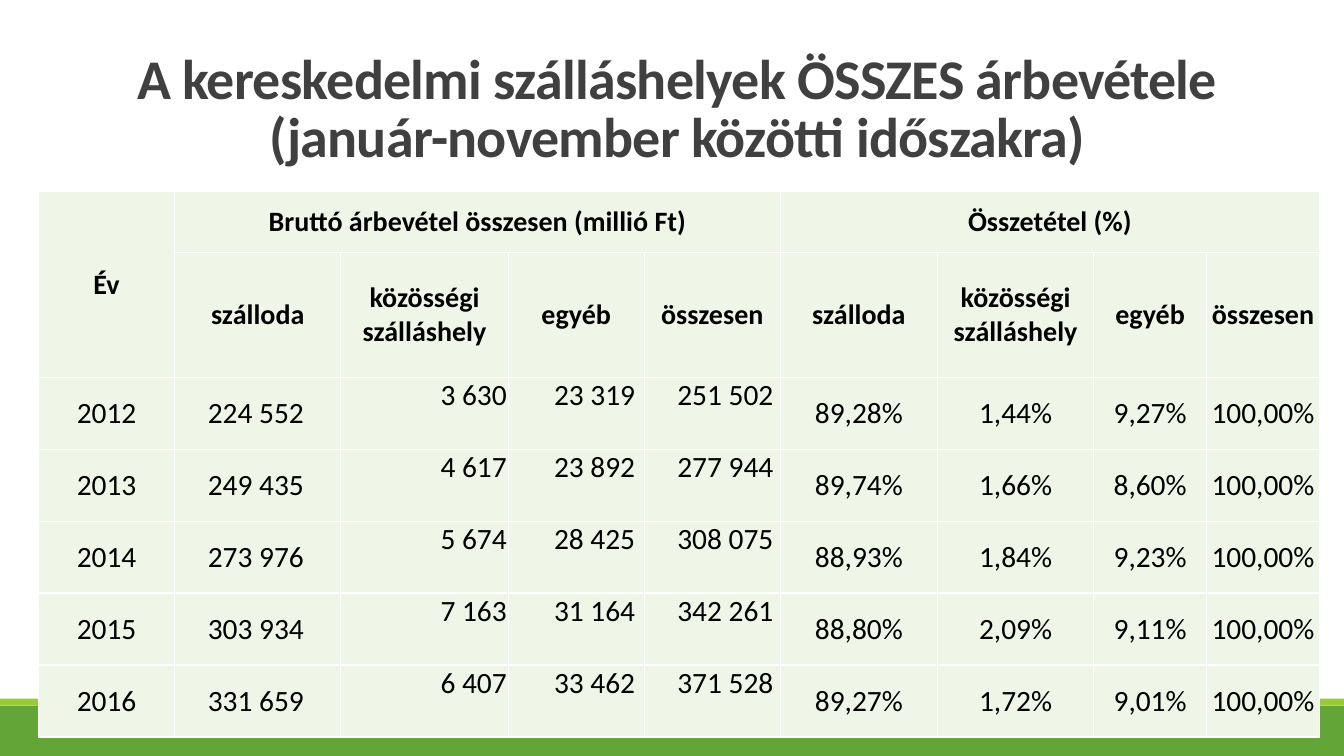
import pptx
import pptx.util
import pptx.dml.color
import pptx.enum.shapes
import pptx.enum.text
import pptx.oxml
import pptx.oxml.ns

Pt = pptx.util.Pt
RGBColor = pptx.dml.color.RGBColor
Align = pptx.enum.text.PP_ALIGN
Anchor = pptx.enum.text.MSO_ANCHOR
qn = pptx.oxml.ns.qn

TITLE = "A kereskedelmi szálláshelyek ÖSSZES árbevétele\v(január-november közötti időszakra)"
GROUPS = ["Bruttó árbevétel összesen (millió Ft)", "Összetétel (%)"]
KINDS = ["szálloda", "közösségi szálláshely", "egyéb", "összesen"]
YEARS = [
    ("2012", "224 552", "3 630", "23 319", "251 502", "89,28%", "1,44%", "9,27%", "100,00%"),
    ("2013", "249 435", "4 617", "23 892", "277 944", "89,74%", "1,66%", "8,60%", "100,00%"),
    ("2014", "273 976", "5 674", "28 425", "308 075", "88,93%", "1,84%", "9,23%", "100,00%"),
    ("2015", "303 934", "7 163", "31 164", "342 261", "88,80%", "2,09%", "9,11%", "100,00%"),
    ("2016", "331 659", "6 407", "33 462", "371 528", "89,27%", "1,72%", "9,01%", "100,00%"),
]

FONT = "Calibri"
GREEN = RGBColor(0x63, 0xA5, 0x37)
LIME = RGBColor(0x99, 0xCB, 0x38)
PALE = RGBColor(0xEF, 0xF6, 0xE8)
GREY = RGBColor(0x40, 0x40, 0x40)
BLACK = RGBColor(0, 0, 0)

WIDTH, HEIGHT = 960, 540
BARS = [(504, 36, GREEN), (499, 5, LIME)]
COLUMN_WIDTHS = [97.2, 118.8, 119.5, 97.2, 97.2, 112.3, 111.6, 80.6, 80.6]
ROW_HEIGHTS = [43.5, 89] + [51.4] * len(YEARS)
RIGHT_GAPS = {1: 26.5, 2: 1, 3: 6.5, 4: 5}
TOP_COLUMNS = (2, 3, 4)
BORDER = (
    '<a:{side} xmlns:a="http://schemas.openxmlformats.org/drawingml/2006/main" w="12700">'
    '<a:solidFill><a:srgbClr val="FFFFFF"/></a:solidFill></a:{side}>'
)


def format_text(frame, size, color, bold, align):
    for para in frame.paragraphs:
        para.alignment = align
        for span in para.runs:
            span.font.name = FONT
            span.font.size = Pt(size)
            span.font.bold = bold
            span.font.color.rgb = color


def add_title(page):
    title = page.shapes.title
    title.left, title.top, title.width, title.height = Pt(28.8), Pt(22.3), Pt(910), Pt(114.5)
    frame = title.text_frame
    frame.text = TITLE
    frame.word_wrap = True
    frame.auto_size = pptx.enum.text.MSO_AUTO_SIZE.NONE
    frame.vertical_anchor = Anchor.MIDDLE
    format_text(frame, 40, GREY, True, Align.CENTER)
    frame.paragraphs[0].line_spacing = 0.85
    for properties in title.element.iter(qn("a:rPr")):
        properties.set("spc", "-50")


def add_bars(page):
    for top, height, color in BARS:
        bar = page.shapes.add_shape(
            pptx.enum.shapes.MSO_SHAPE.RECTANGLE, 0, Pt(top), Pt(WIDTH), Pt(height)
        )
        bar.shadow.inherit = False
        bar.fill.solid()
        bar.fill.fore_color.rgb = color
        bar.line.fill.background()


def add_revenue_table(page):
    blank = [""] * (len(KINDS) - 1)
    rows = [["Év", GROUPS[0], *blank, GROUPS[1], *blank], ["", *KINDS, *KINDS], *YEARS]
    holder = page.shapes.add_table(
        len(rows), len(COLUMN_WIDTHS), Pt(27.5), Pt(137),
        Pt(sum(COLUMN_WIDTHS)), Pt(sum(ROW_HEIGHTS)),
    )
    table = holder.table
    table.first_row = table.horz_banding = False
    for column, width in zip(table.columns, COLUMN_WIDTHS):
        column.width = Pt(width)
    for row, height in zip(table.rows, ROW_HEIGHTS):
        row.height = Pt(height)

    for r, values in enumerate(rows):
        header = r < 2
        for c, value in enumerate(values):
            cell = table.cell(r, c)
            cell.text = value
            cell.fill.solid()
            cell.fill.fore_color.rgb = PALE
            cell.margin_left = cell.margin_top = cell.margin_bottom = 0
            cell.margin_right = Pt(0 if header else RIGHT_GAPS.get(c, 0))
            at_top = not header and c in TOP_COLUMNS
            cell.vertical_anchor = Anchor.TOP if at_top else Anchor.MIDDLE
            align = Align.RIGHT if not header and c in RIGHT_GAPS else Align.CENTER
            format_text(cell.text_frame, 20 if header else 21, BLACK, header, align)

    table.cell(0, 0).merge(table.cell(1, 0))
    for start in (1, 1 + len(KINDS)):
        table.cell(0, start).merge(table.cell(0, start + len(KINDS) - 1))
    for properties in holder.element.iter(qn("a:tcPr")):
        for place, side in enumerate(("lnL", "lnR", "lnT", "lnB")):
            properties.insert(place, pptx.oxml.parse_xml(BORDER.format(side=side)))


def main():
    deck = pptx.Presentation()
    deck.slide_width, deck.slide_height = Pt(WIDTH), Pt(HEIGHT)
    page = deck.slides.add_slide(deck.slide_layouts[5])
    add_title(page)
    add_bars(page)
    add_revenue_table(page)
    deck.save("out.pptx")


if __name__ == "__main__":
    main()
